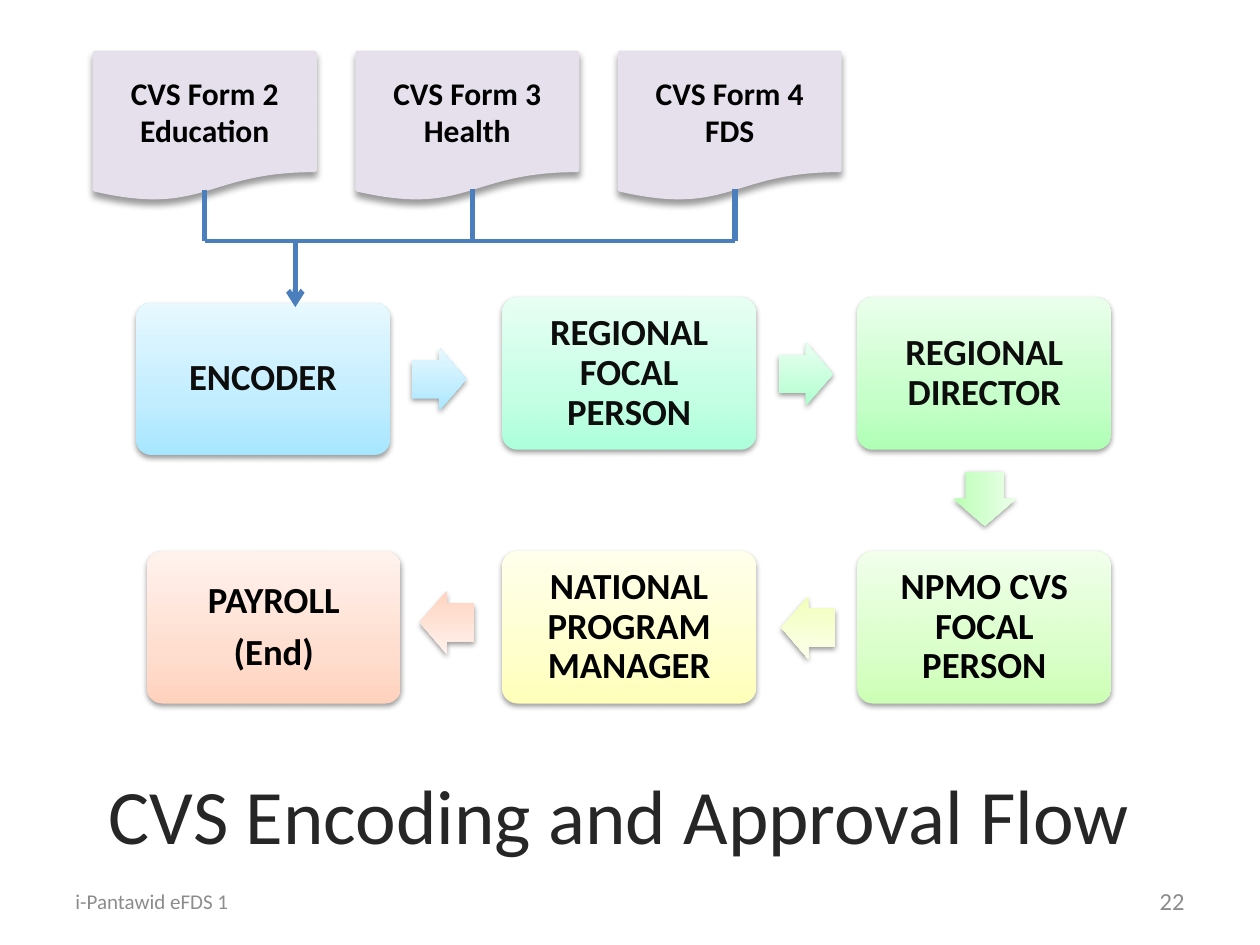
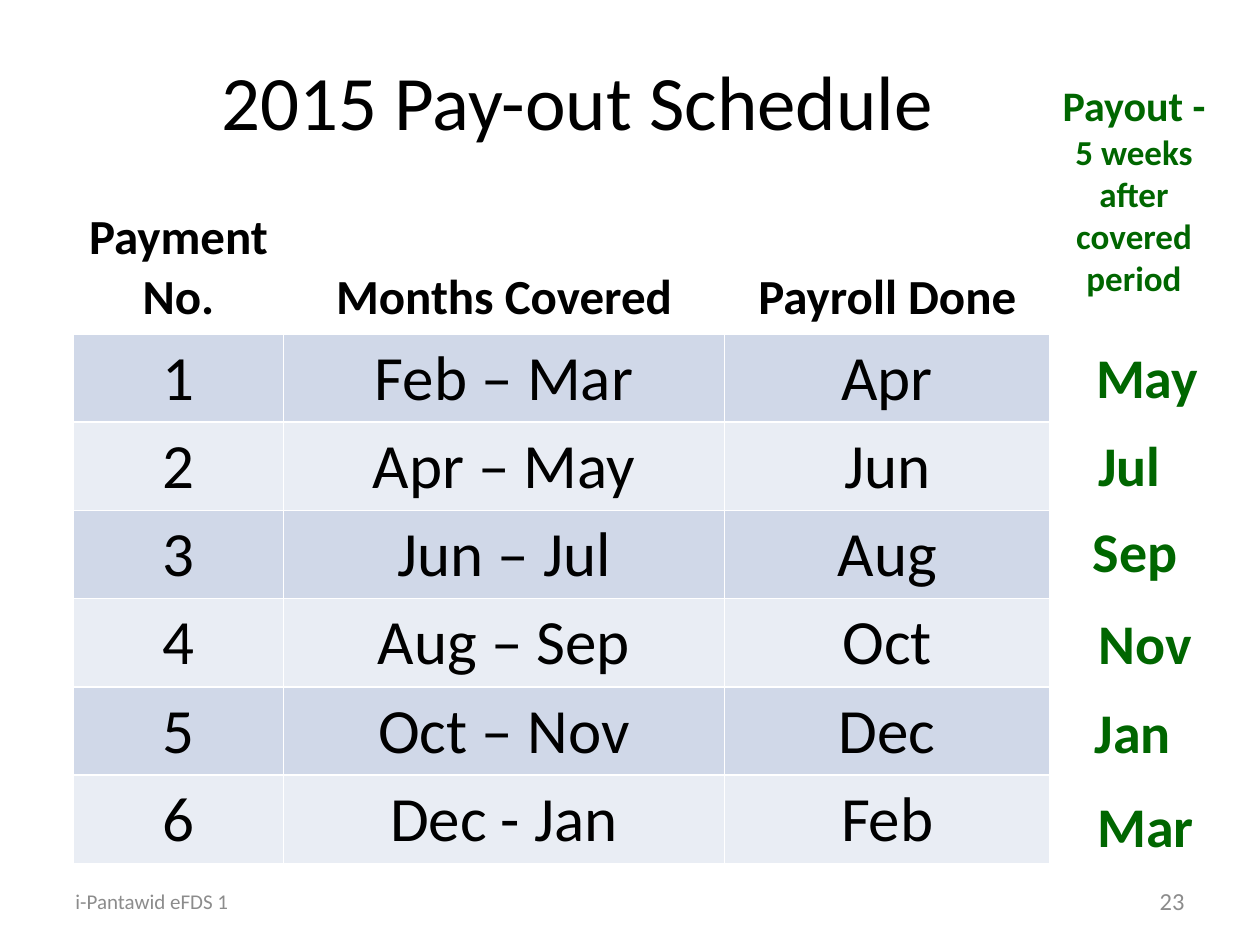
from pptx import Presentation
from pptx.util import Pt
from pptx.dml.color import RGBColor
from pptx.enum.shapes import MSO_SHAPE as Shape, MSO_CONNECTOR as Connector
from pptx.enum.text import PP_ALIGN as Align, MSO_ANCHOR as Anchor
from pptx.oxml import parse_xml
from pptx.oxml.ns import nsdecls, qn
from lxml import etree

FONT = "Calibri"
COLORS = {
    "black": "000000", "ink": "0D0D0D", "title": "262626", "footer": "8C8C8C",
    "payout": "006600", "form": "E6E0EC", "line": "4B7EBC",
    "band_dark": "D0D8E8", "band_light": "E9EDF4",
}
GRADIENTS = {
    "blue": ("A7E6FF", "C1EDFF", "E7F8FF"),
    "mint": ("ACFFDA", "C4FFE4", "E8FFF4"),
    "sea": ("ADFFCD", "C5FFDB", "E9FFF1"),
    "green": ("B0FFB5", "C7FFCA", "EAFFEB"),
    "leaf": ("B9FFB2", "CDFFC9", "ECFFEA"),
    "lime": ("CCFFB5", "DAFFCA", "F1FFEB"),
    "citron": ("F1FFB8", "F5FFCC", "FBFFEC"),
    "yellow": ("FEFFB9", "FFFFCE", "FFFFEC"),
    "peach": ("FFD2BD", "FFDED0", "FFF2ED"),
}


def write_text(frame, lines, size, color, bold=False, align=Align.LEFT, anchor=Anchor.MIDDLE):
    frame.text = "\n".join(lines)
    frame.vertical_anchor = anchor
    for paragraph in frame.paragraphs:
        paragraph.alignment = align
        paragraph.font.name = FONT
        paragraph.font.size = Pt(size)
        paragraph.font.bold = bold
        paragraph.font.color.rgb = RGBColor.from_string(COLORS[color])


def add_shadowed(slide, kind, left, top, width, height, gradient, shadow):
    shape = slide.shapes.add_shape(kind, Pt(left), Pt(top), Pt(width), Pt(height))
    shape.line.fill.background()
    if gradient:
        shape.fill.gradient()
        fill = shape._element.spPr.find(qn("a:gradFill"))
        stops = "".join(
            f'<a:gs pos="{position}"><a:srgbClr val="{color}"/></a:gs>'
            for position, color in zip((0, 35000, 100000), GRADIENTS[gradient]))
        fill.replace(fill.find(qn("a:gsLst")),
                     parse_xml(f'<a:gsLst {nsdecls("a")}>{stops}</a:gsLst>'))
        fill.find(qn("a:lin")).set("ang", "16200000")
    shape.shadow.inherit = False
    blur, distance, alpha = shadow
    shape._element.spPr.find(qn("a:effectLst")).append(parse_xml(
        f'<a:outerShdw {nsdecls("a")} blurRad="{Pt(blur)}" dist="{Pt(distance)}" dir="5400000" '
        f'rotWithShape="0"><a:srgbClr val="000000"><a:alpha val="{alpha}000"/></a:srgbClr></a:outerShdw>'))
    return shape


presentation = Presentation()
presentation.slide_width, presentation.slide_height = Pt(720), Pt(540)
title_only = presentation.slide_layouts[5]

slides = []
for number, title, title_box, color in (
    ("22", "CVS Encoding and Approval Flow", (54, 438, 600, 54), "title"),
    ("23", "2015 Pay-out Schedule", (6, 12, 648, 90), "black"),
):
    slide = presentation.slides.add_slide(title_only)
    heading = slide.shapes.title
    heading.left, heading.top, heading.width, heading.height = map(Pt, title_box)
    write_text(heading.text_frame, [title], 44, color, align=Align.CENTER)
    for text, left, width, size, align in (
        (number, 498, 186, 14, Align.RIGHT),
        ("i-Pantawid eFDS 1", 36, 168, 12, Align.LEFT),
    ):
        footer = slide.shapes.add_textbox(Pt(left), Pt(500.5), Pt(width), Pt(28.75))
        footer.text_frame.word_wrap = True
        write_text(footer.text_frame, [text], size, "footer", align=align)
    slides.append(slide)
flow_slide, schedule_slide = slides

STEP_SHADOW = (3.1, 1.6, 38)
for lines, left, top, gradient, color in (
    (["ENCODER"], 77.8, 173, "blue", "ink"),
    (["REGIONAL FOCAL PERSON"], 287, 170, "mint", "ink"),
    (["REGIONAL DIRECTOR"], 490, 170, "green", "ink"),
    (["NPMO CVS FOCAL PERSON"], 490, 315, "lime", "black"),
    (["NATIONAL PROGRAM MANAGER"], 287, 315, "yellow", "black"),
    (["PAYROLL", "(End)"], 84, 315, "peach", "black"),
):
    step = add_shadowed(flow_slide, Shape.ROUNDED_RECTANGLE, left, top, 145, 87, gradient, STEP_SHADOW)
    step.adjustments[0] = 0.1
    frame = step.text_frame
    frame.margin_left = frame.margin_right = frame.margin_top = frame.margin_bottom = Pt(6.5)
    write_text(frame, lines, 21, color, True, Align.CENTER)
    for paragraph in frame.paragraphs:
        paragraph.line_spacing = 0.9
        paragraph.space_after = Pt(7.35)

for left, top, rotation, gradient in (
    (235.5, 198.7, 0, "blue"),
    (445, 195.8, 0, "sea"),
    (547.2, 267, 90, "leaf"),
    (446.4, 340.6, 180, "citron"),
    (239.8, 337.7, 180, "peach"),
):
    arrow = add_shadowed(flow_slide, Shape.RIGHT_ARROW, left, top, 31, 36, gradient, STEP_SHADOW)
    arrow.adjustments[0], arrow.adjustments[1] = 0.6, 0.5
    arrow.rotation = rotation

for index, text in enumerate(("CVS Form 2 Education", "CVS Form 3 Health", "CVS Form 4 FDS")):
    form = add_shadowed(flow_slide, Shape.FLOWCHART_DOCUMENT, 54 + 150 * index, 30, 126, 84, None, (4, 3, 40))
    form.fill.solid()
    form.fill.fore_color.rgb = RGBColor.from_string(COLORS["form"])
    form.line.color.rgb = RGBColor.from_string(COLORS["form"])
    form.line.width = Pt(2)
    write_text(form.text_frame, [text], 18, "black", True, Align.CENTER)

for start_x, start_y, end_x, end_y, width in (
    (117, 108.5, 117, 138, 3),
    (270, 108, 270, 137.5, 3),
    (420, 108, 420, 137.5, 3),
    (117, 137.5, 420, 137.5, 2.25),
    (168.75, 138, 168.75, 175.5, 3),
):
    connector = flow_slide.shapes.add_connector(
        Connector.STRAIGHT, Pt(start_x), Pt(start_y), Pt(end_x), Pt(end_y))
    connector.line.color.rgb = RGBColor.from_string(COLORS["line"])
    connector.line.width = Pt(width)
    etree.SubElement(connector._element.spPr, qn("a:effectLst"))
etree.SubElement(connector.line._get_or_add_ln(), qn("a:tailEnd"), type="arrow")

payout_note = schedule_slide.shapes.add_textbox(Pt(600), Pt(42), Pt(96), Pt(138))
payout_note.text_frame.word_wrap = True
write_text(payout_note.text_frame, ["Payout - "], 24, "payout", True, Align.CENTER, Anchor.TOP)
timing = payout_note.text_frame.paragraphs[0].add_run()
timing.text = "5 weeks after covered period"
timing.font.size = Pt(20)

for month, left, top, width in (
    ("May", 619.2, 192, 73.5),
    ("Jul", 620.5, 242.6, 50.5),
    ("Sep", 617.5, 291.6, 63.5),
    ("Nov", 620.5, 344.2, 68.5),
    ("Jan", 618.5, 395.3, 58.5),
    ("Mar", 620, 448.5, 70.5),
):
    payout_month = schedule_slide.shapes.add_textbox(Pt(left), Pt(top), Pt(width), Pt(46))
    payout_month.text_frame.word_wrap = False
    write_text(payout_month.text_frame, [month], 32, "payout", True, anchor=Anchor.TOP)

rows = (
    ("Payment No.", "Months Covered", "Payroll Done"),
    ("1", "Feb – Mar", "Apr"),
    ("2", "Apr – May", "Jun"),
    ("3", "Jun – Jul", "Aug"),
    ("4", "Aug – Sep", "Oct"),
    ("5", "Oct – Nov", "Dec"),
    ("6", "Dec - Jan", "Feb"),
)
schedule = schedule_slide.shapes.add_table(7, 3, Pt(42), Pt(115.2), Pt(558), Pt(376.8)).table
schedule.horz_banding = False
for column, width in zip(schedule.columns, (120, 252, 186)):
    column.width = Pt(width)
for row_index, texts in enumerate(rows):
    is_header = row_index == 0
    schedule.rows[row_index].height = Pt(75.6 if is_header else 50.2)
    for column_index, text in enumerate(texts):
        cell = schedule.cell(row_index, column_index)
        write_text(cell.text_frame, [text], 28 if is_header else 36, "black", is_header, Align.CENTER)
        cell.vertical_anchor = Anchor.BOTTOM if is_header else Anchor.TOP
        if is_header:
            cell.fill.background()
        else:
            cell.fill.solid()
            band = "band_dark" if row_index % 2 else "band_light"
            cell.fill.fore_color.rgb = RGBColor.from_string(COLORS[band])

presentation.save("out.pptx")
